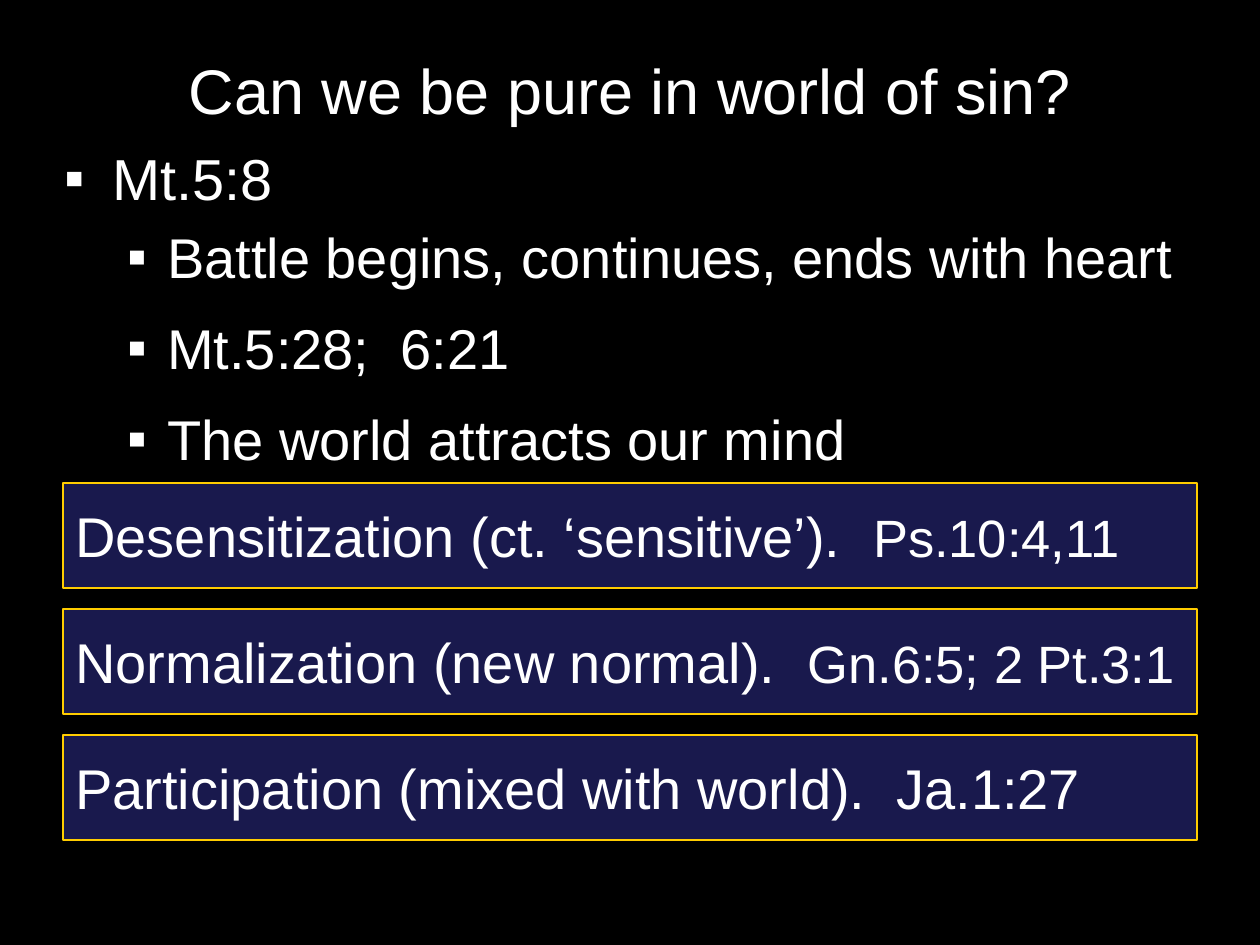
from lxml import etree
from pptx import Presentation
from pptx.dml.color import RGBColor
from pptx.enum.shapes import MSO_SHAPE
from pptx.enum.text import MSO_ANCHOR, PP_ALIGN
from pptx.oxml.ns import qn
from pptx.util import Pt

BLACK = RGBColor(0x00, 0x00, 0x00)
WHITE = RGBColor(0xFF, 0xFF, 0xFF)
NAVY = RGBColor(0x19, 0x19, 0x4D)
GOLD = RGBColor(0xFF, 0xCC, 0x00)
RECT = MSO_SHAPE.RECTANGLE
MIDDLE = MSO_ANCHOR.MIDDLE
LEFT, CENTER = PP_ALIGN.LEFT, PP_ALIGN.CENTER
TITLE_ONLY = 5


def set_font(para, size):
    para.font.name = "Arial"
    para.font.size = Pt(size)
    para.font.color.rgb = WHITE


def add_bullet(para, margin, hang):
    """Give the paragraph a square bullet with a hanging indent."""
    props = para._p.get_or_add_pPr()
    props.set("marL", str(Pt(margin)))
    props.set("indent", str(-Pt(hang)))
    font = etree.SubElement(props, qn("a:buFont"))
    font.set("typeface", "Arial")
    mark = etree.SubElement(props, qn("a:buChar"))
    mark.set("char", "▪")


prs = Presentation()
prs.slide_width, prs.slide_height = Pt(720), Pt(540)
slide = prs.slides.add_slide(prs.slide_layouts[TITLE_ONLY])
slide.background.fill.solid()
slide.background.fill.fore_color.rgb = BLACK

# Title
title = slide.shapes.title
title.left, title.top, title.width, title.height = Pt(36), Pt(6), Pt(648), Pt(90)
title.text_frame.text = "Can we be pure in world of sin?"
title.text_frame.vertical_anchor = MIDDLE
head = title.text_frame.paragraphs[0]
head.alignment = CENTER
set_font(head, 36)

# Bullets: text, level, size, margin, hang, space before, space after
points = [
    ("Mt.5:8", 0, 33, 27, 27, 7, 0),
    ("Battle begins, continues, ends with heart", 1, 32, 58.5, 22.5, 6, 6),
    ("Mt.5:28;  6:21", 1, 32, 58.5, 22.5, 7.5, 6),
    ("The world attracts our mind", 1, 32, 58.5, 22.5, 7.5, 6),
]
body = slide.shapes.add_textbox(Pt(30), Pt(78), Pt(660), Pt(396)).text_frame
body.word_wrap = True
for i, (text, level, size, margin, hang, before, after) in enumerate(points):
    para = body.add_paragraph() if i else body.paragraphs[0]
    para.text = text
    para.level = level
    para.space_before, para.space_after = Pt(before), Pt(after)
    set_font(para, size)
    add_bullet(para, margin, hang)

# Stages: phrase, verse, verse size
stages = [
    ("Desensitization (ct. ‘sensitive’).  ", "Ps.10:4,11", 30),
    ("Normalization (new normal).  ", "Gn.6:5; 2 Pt.3:1", 30),
    ("Participation (mixed with world).  ", "Ja.1:27", 32),
]
for i, (phrase, verse, size) in enumerate(stages):
    box = slide.shapes.add_shape(RECT, Pt(36), Pt(276 + 72 * i), Pt(648), Pt(60))
    box.shadow.inherit = False
    box.fill.solid()
    box.fill.fore_color.rgb = NAVY
    box.line.color.rgb = GOLD
    box.line.width = Pt(1)
    box.text_frame.word_wrap = True
    box.text_frame.vertical_anchor = MIDDLE
    para = box.text_frame.paragraphs[0]
    para.alignment = LEFT
    para.space_after = Pt(6)
    set_font(para, 32)
    para.add_run().text = phrase
    run = para.add_run()
    run.text = verse
    run.font.size = Pt(size)

prs.save("out.pptx")
